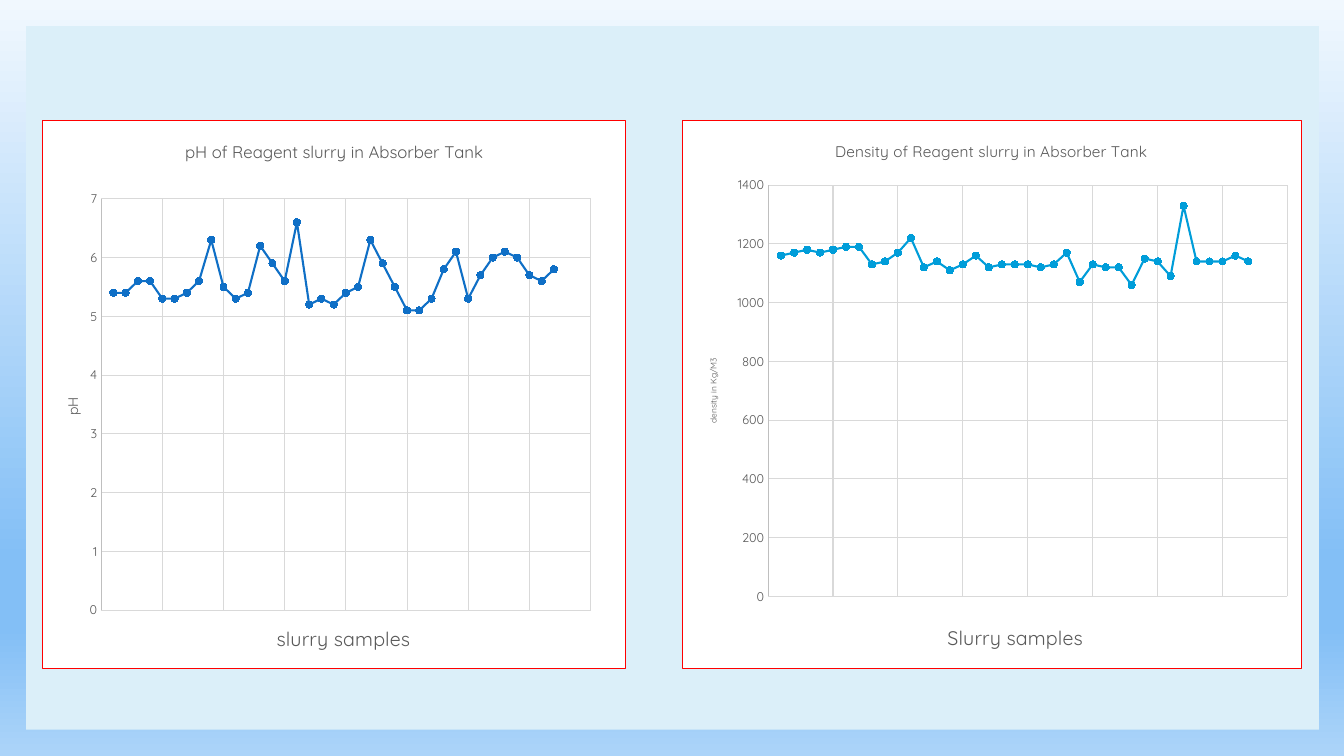
from dataclasses import dataclass
from typing import Any

from lxml.etree import SubElement
from pptx import Presentation
from pptx.chart.data import XyChartData
from pptx.dml.color import RGBColor
from pptx.enum.chart import XL_CHART_TYPE, XL_MARKER_STYLE, XL_TICK_LABEL_POSITION, XL_TICK_MARK
from pptx.enum.shapes import MSO_SHAPE
from pptx.oxml import parse_xml
from pptx.oxml.ns import nsdecls, qn
from pptx.util import Inches, Pt

CELL = 0.1
FONT = "Quicksand"
GREY, GRID, AXIS = "595959", "D9D9D9", "BFBFBF"
BACKGROUND = ((0, "F1F8FE"), (74, "83BFF6"), (83, "83BFF6"), (100, "ACD4F9"))


@dataclass(frozen=True)
class Label:
    """A text with its size in points and its place in percent of the chart."""
    text: str
    size: float
    place: tuple[float, ...] = ()


@dataclass(frozen=True)
class Panel:
    """A scatter chart placed in grid columns and rows."""
    column: float
    width: float
    title: Label
    sample_title: Label
    value_title: Label
    plot: tuple[float, ...]
    color: str
    top: float
    step: float
    readings: tuple[float, ...]


PANELS = (
    Panel(4.2, 57.9, Label("pH of Reagent slurry in Absorber Tank", 12),
          Label("slurry samples", 14, (39.5, 91.2)), Label("pH", 10, (3, 50)),
          (10, 14.3, 84, 75), "0F6FC6", 7, 1,
          (5.4, 5.4, 5.6, 5.6, 5.3, 5.3, 5.4, 5.6, 6.3, 5.5, 5.3, 5.4, 6.2,
           5.9, 5.6, 6.6, 5.2, 5.3, 5.2, 5.4, 5.5, 6.3, 5.9, 5.5, 5.1, 5.1,
           5.3, 5.8, 6.1, 5.3, 5.7, 6, 6.1, 6, 5.7, 5.6, 5.8)),
    Panel(67.6, 61.5, Label("Density of Reagent slurry in Absorber Tank", 11),
          Label("Slurry samples", 14, (42.3, 91)), Label("density in Kg/M3", 6, (3.8, 43)),
          (13.9, 11.8, 83.9, 75), "009DD9", 1400, 200,
          (1160, 1170, 1180, 1170, 1180, 1190, 1190, 1130, 1140, 1170, 1220, 1120, 1140,
           1110, 1130, 1160, 1120, 1130, 1130, 1130, 1120, 1130, 1170, 1070, 1130, 1120,
           1120, 1060, 1150, 1140, 1090, 1330, 1140, 1140, 1140, 1160, 1140)),
)


def cells(*counts: float) -> list[int]:
    """Turn grid counts into slide lengths."""
    return [Inches(count * CELL) for count in counts]


def color(value: str) -> RGBColor:
    """Turn a hex string into a colour."""
    return RGBColor.from_string(value)


def apply(target: Any, values: dict[str, Any]) -> None:
    """Set every named attribute of the target."""
    for name, value in values.items():
        setattr(target, name, value)


def style_font(font: Any, size: float, shade: str = GREY) -> None:
    """Give a font the slide's typeface, a size and a colour."""
    apply(font, {"name": FONT, "size": Pt(size), "bold": False})
    font.color.rgb = color(shade)


def style_line(line: Any, shade: str, width: float = 0.75) -> None:
    """Give a line a solid colour and a width."""
    line.color.rgb = color(shade)
    line.width = Pt(width)


def write_label(title: Any, label: Label) -> None:
    """Write a chart or axis title and place it."""
    frame = title.text_frame
    frame.text = label.text
    style_font(frame.paragraphs[0].runs[0].font, label.size)
    if label.place:
        place(title.element, label.place, 1)


def place(element: Any, shares: tuple[float, ...], index: int) -> None:
    """Fix a chart part at shares given in percent."""
    for former in element.findall(qn("c:layout")):
        element.remove(former)
    layout = parse_xml(f"<c:layout {nsdecls('c')}/>")
    manual = SubElement(layout, qn("c:manualLayout"))
    settings = [("layoutTarget", "inner")] if len(shares) == 4 else []
    settings += [("xMode", "edge"), ("yMode", "edge")]
    settings += [(name, str(share / 100)) for name, share in zip("xywh", shares)]
    for name, value in settings:
        SubElement(manual, qn(f"c:{name}")).set("val", value)
    element.insert(index, layout)


def paint_background(page: Any) -> None:
    """Fill the page with the vertical blue gradient."""
    fill = page.background.fill
    fill.gradient()
    fill.gradient_angle = 270
    stops = next(page.element.iter(qn("a:gsLst")))
    for former in list(stops):
        stops.remove(former)
    for position, shade in BACKGROUND:
        stop = SubElement(stops, qn("a:gs"), pos=str(position * 1000))
        SubElement(stop, qn("a:srgbClr"), val=shade)


def draw_board(page: Any) -> None:
    """Draw the pale board behind the charts."""
    board = page.shapes.add_shape(MSO_SHAPE.RECTANGLE, *cells(2.6, 2.6, 128.2, 69.8))
    board.shadow.inherit = False
    board.fill.solid()
    board.fill.fore_color.rgb = color("DBEFF9")
    board.line.fill.background()


def style_axis(axis: Any, label: Label, top: float, step: float) -> None:
    """Set an axis scale, its gridlines and its title."""
    apply(axis, {"minimum_scale": 0, "maximum_scale": top, "major_unit": step,
                 "has_major_gridlines": True, "has_title": True,
                 "major_tick_mark": XL_TICK_MARK.NONE, "minor_tick_mark": XL_TICK_MARK.NONE})
    style_line(axis.major_gridlines.format.line, GRID)
    style_line(axis.format.line, AXIS)
    style_font(axis.tick_labels.font, 9)
    write_label(axis.axis_title, label)


def frame_chart(chart: Any) -> None:
    """Give the chart a white ground and a red border."""
    chart.element.find(qn("c:txPr")).addprevious(parse_xml(
        f"<c:spPr {nsdecls('c', 'a')}><a:solidFill><a:srgbClr val='FFFFFF'/></a:solidFill>"
        f"<a:ln w='{Pt(0.75)}'><a:solidFill><a:srgbClr val='FF0000'/></a:solidFill></a:ln></c:spPr>"))


def draw_panel(page: Any, panel: Panel) -> None:
    """Draw one scatter chart of the slurry samples."""
    data = XyChartData()
    samples = data.add_series("Series 1")
    for number, reading in enumerate(panel.readings, 1):
        samples.add_data_point(number, reading)
    chart = page.shapes.add_chart(XL_CHART_TYPE.XY_SCATTER_LINES,
                                  *cells(panel.column, 11.9, panel.width, 54.5), data).chart
    apply(chart, {"has_legend": False, "has_title": True})
    style_font(chart.font, 10, "000000")
    frame_chart(chart)
    write_label(chart.chart_title, panel.title)
    style_axis(chart.category_axis, panel.sample_title, 40, 5)
    style_axis(chart.value_axis, panel.value_title, panel.top, panel.step)
    apply(chart.category_axis, {"visible": False,
                                "tick_label_position": XL_TICK_LABEL_POSITION.NONE})
    chart.value_axis.tick_labels.number_format = "General"
    chart.value_axis.tick_labels.number_format_is_linked = False
    place(next(chart.element.iter(qn("c:plotArea"))), panel.plot, 0)
    plot = chart.plots[0]
    plot.vary_by_categories = False
    series = plot.series[0]
    series.smooth = False
    style_line(series.format.line, panel.color, 1.5)
    apply(series.marker, {"style": XL_MARKER_STYLE.CIRCLE, "size": 5})
    series.marker.format.fill.solid()
    series.marker.format.fill.fore_color.rgb = color(panel.color)
    style_line(series.marker.format.line, panel.color)


def main() -> None:
    """Build the slide and save it."""
    deck = Presentation()
    apply(deck, {"slide_width": Inches(13.33), "slide_height": Inches(7.5)})
    page = deck.slides.add_slide(deck.slide_layouts[6])
    paint_background(page)
    draw_board(page)
    for panel in PANELS:
        draw_panel(page, panel)
    deck.save("out.pptx")


if __name__ == "__main__":
    main()
